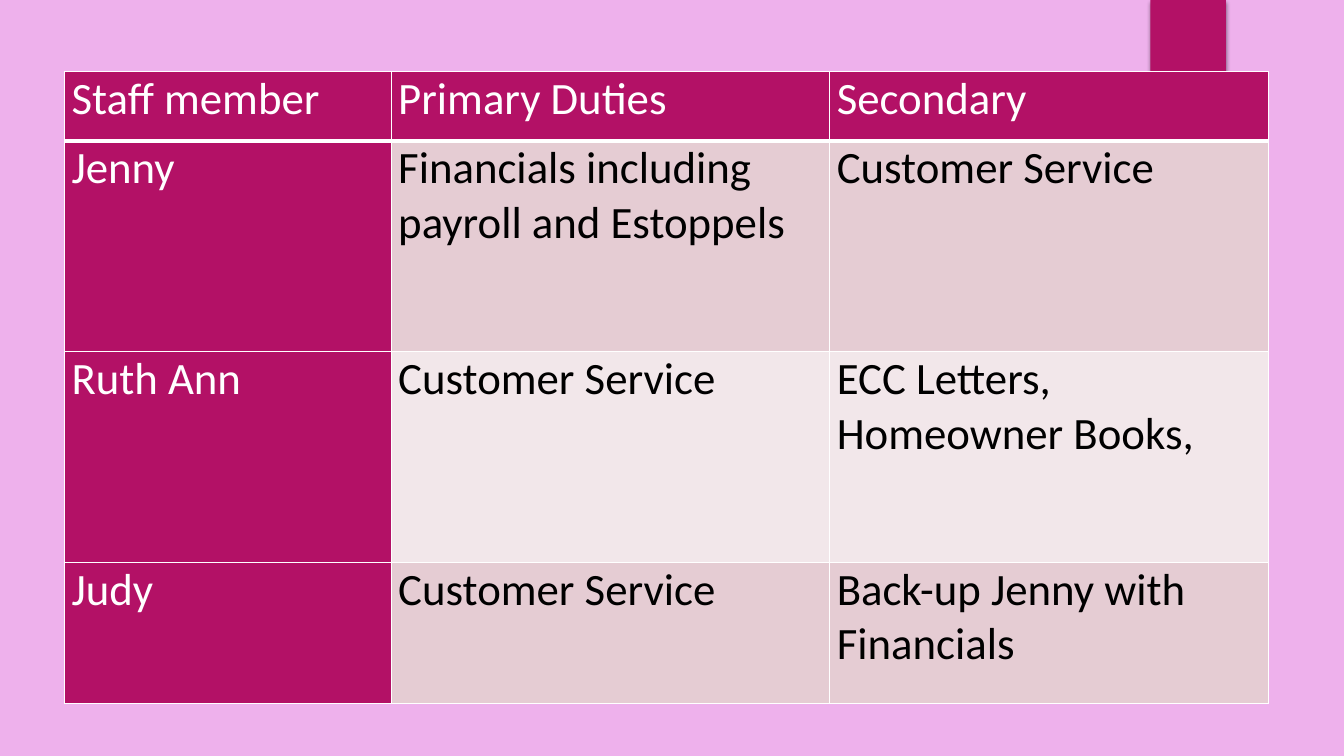
from dataclasses import dataclass

from lxml.etree import SubElement
from pptx import Presentation
from pptx.dml.color import RGBColor
from pptx.enum.shapes import MSO_SHAPE
from pptx.oxml.ns import qn
from pptx.util import Inches, Pt

COLORS = {
    "background": "EEB1EC",
    "accent": "B31166",
    "band_dark": "E5CCD3",
    "band_light": "F2E7EA",
    "white": "FFFFFF",
    "black": "000000",
}
COLUMN_WIDTHS = (3.24, 4.35, 4.35)


@dataclass
class DutyRow:
    height: float
    texts: tuple[str, str, str]


ROWS = [
    DutyRow(0.69, ("Staff member", "Primary Duties", "Secondary")),
    DutyRow(2.09, ("Jenny", "Financials including payroll and Estoppels", "Customer Service")),
    DutyRow(2.09, ("Ruth Ann", "Customer Service", "ECC Letters, Homeowner Books,")),
    DutyRow(1.4, ("Judy", "Customer Service", "Back-up Jenny with Financials")),
]


def rgb(name: str) -> RGBColor:
    return RGBColor.from_string(COLORS[name])


def add_tab(slide) -> None:
    """Draw the accent tab with its soft shadow."""
    sp = slide.shapes.add_shape(MSO_SHAPE.RECTANGLE, Inches(11.41), 0, Inches(0.75), Inches(1.25))
    sp.fill.solid()
    sp.fill.fore_color.rgb = rgb("accent")
    sp.line.fill.background()
    sp.shadow.inherit = False
    effects = sp._element.spPr.find(qn("a:effectLst"))
    shadow = SubElement(effects, qn("a:outerShdw"), blurRad=str(Pt(3)), dist=str(Pt(2)),
                        dir="5400000", rotWithShape="0")
    color = SubElement(shadow, qn("a:srgbClr"), val=COLORS["black"])
    SubElement(color, qn("a:alpha"), val="45000")


def set_borders(cell, bottom: float) -> None:
    """Put white borders round a cell, ahead of its fill."""
    tc_pr = cell._tc.get_or_add_tcPr()
    widths = {"a:lnL": 1, "a:lnR": 1, "a:lnT": 1, "a:lnB": bottom}
    for i, (tag, width) in enumerate(widths.items()):
        ln = SubElement(tc_pr, qn(tag), w=str(Pt(width)))
        fill = SubElement(ln, qn("a:solidFill"))
        SubElement(fill, qn("a:srgbClr"), val=COLORS["white"])
        tc_pr.insert(i, ln)


def format_cell(cell, text: str, fill: str, font_color: str, bottom: float) -> None:
    cell.text = text
    cell.margin_left = cell.margin_right = Inches(0.07)
    cell.margin_top = cell.margin_bottom = 0
    font = cell.text_frame.paragraphs[0].font
    font.name = "Calibri"
    font.size = Pt(32)
    font.bold = False
    font.color.rgb = rgb(font_color)
    cell.fill.solid()
    cell.fill.fore_color.rgb = rgb(fill)
    set_borders(cell, bottom)


def add_duties_table(slide) -> None:
    height = sum(row.height for row in ROWS)
    frame = slide.shapes.add_table(len(ROWS), len(COLUMN_WIDTHS), Inches(0.64), Inches(0.71),
                                   Inches(sum(COLUMN_WIDTHS)), Inches(height))
    table = frame.table
    table.first_col = True
    for column, width in zip(table.columns, COLUMN_WIDTHS):
        column.width = Inches(width)
    for i, row in enumerate(ROWS):
        table.rows[i].height = Inches(row.height)
        band = "band_dark" if i % 2 else "band_light"
        for j, text in enumerate(row.texts):
            heading = i == 0 or j == 0
            format_cell(table.cell(i, j), text,
                        fill="accent" if heading else band,
                        font_color="white" if heading else "black",
                        bottom=3 if i == 0 else 1)


def main() -> None:
    prs = Presentation()
    prs.slide_width, prs.slide_height = Inches(13.33), Inches(7.5)
    slide = prs.slides.add_slide(prs.slide_layouts[6])

    # Background
    slide.background.fill.solid()
    slide.background.fill.fore_color.rgb = rgb("background")

    # Tab behind the table, then the table
    add_tab(slide)
    add_duties_table(slide)
    prs.save("out.pptx")


if __name__ == "__main__":
    main()
